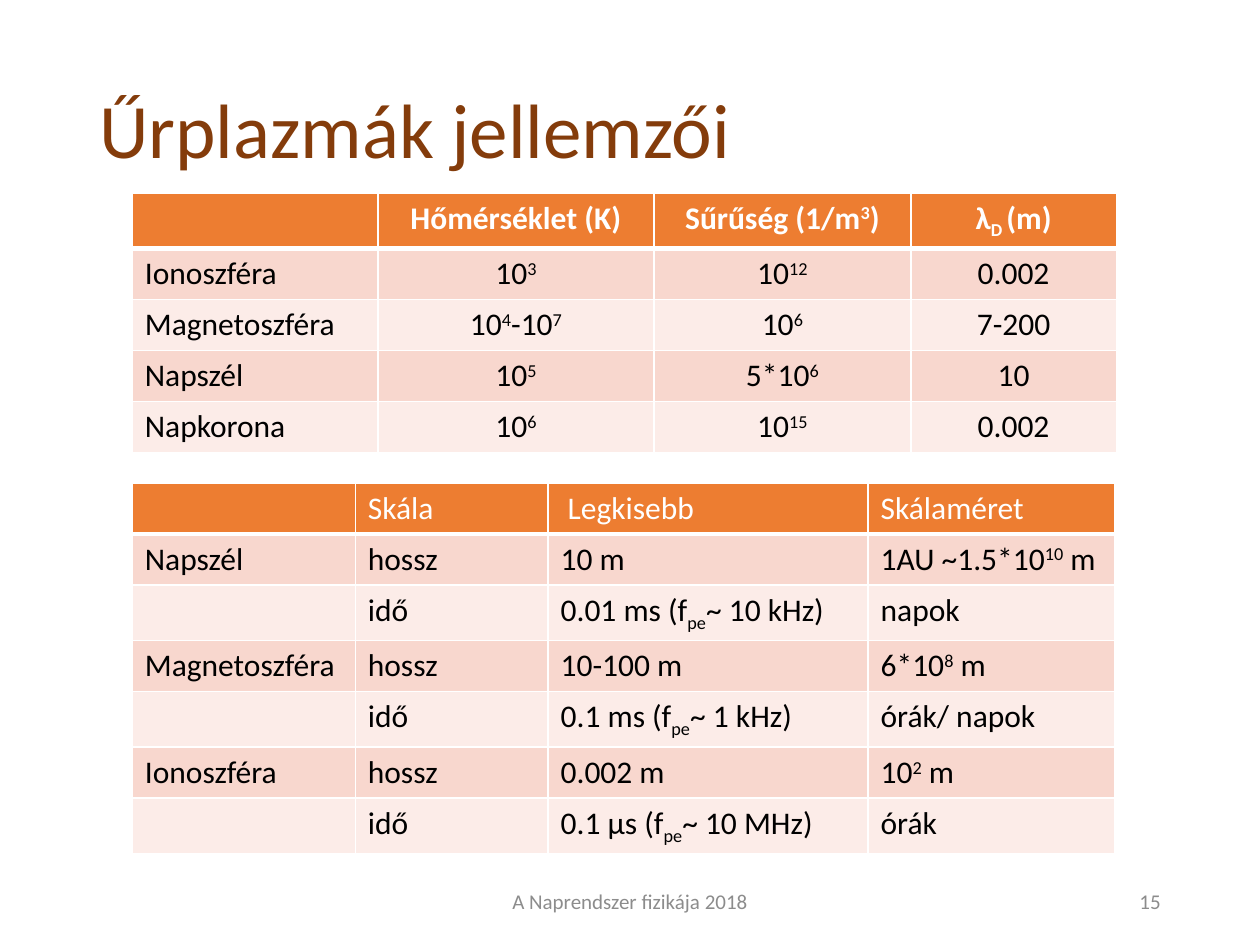
from dataclasses import dataclass

from lxml import etree
from pptx import Presentation
from pptx.dml.color import RGBColor
from pptx.enum.text import MSO_ANCHOR, PP_ALIGN
from pptx.oxml.ns import qn
from pptx.util import Inches, Pt

LEFT, MID, RIGHT = PP_ALIGN.LEFT, PP_ALIGN.CENTER, PP_ALIGN.RIGHT
TOP, CENTRE = MSO_ANCHOR.TOP, MSO_ANCHOR.MIDDLE
WIDE, HIGH = Inches(10), Inches(7.5)
FONT = "Calibri"
WHITE, BLACK, BROWN, GREY = "FFFFFF", "000000", "843C0B", "8C8C8C"
HEAD, BANDS = "ED7D31", ("F8D7CE", "FCECE8")
ROW = 5.4  # table row, percent of slide height
SHIFT = {"^": "30000", "_": "-25000"}  # raised and lowered runs


@dataclass
class Label:
    """A line of text; the box is in percent of the slide."""
    text: str
    box: tuple
    size: int
    hue: str
    align: PP_ALIGN
    anchor: MSO_ANCHOR
    space: float = 1.0


@dataclass
class Grid:
    """A banded table; places and widths are in percent of the slide."""
    left: float
    top: float
    cols: tuple
    rows: tuple
    bold: bool
    align: PP_ALIGN


def across(part: float) -> int:
    return round(WIDE * part / 100)


def down(part: float) -> int:
    return round(HIGH * part / 100)


def tint(code: str) -> RGBColor:
    return RGBColor.from_string(code)


def write(para, text: str, size: int, hue: str, bold: bool = False) -> None:
    """Add runs parted by |, where a leading ^ raises and _ lowers."""
    look = {"name": FONT, "size": Pt(size), "bold": bold}
    for piece in text.split("|"):
        shift = SHIFT.get(piece[:1])
        run = para.add_run()
        run.text = piece[1:] if shift else piece
        for key, value in look.items():
            setattr(run.font, key, value)
        run.font.color.rgb = tint(hue)
        if shift:
            run.font._element.set("baseline", shift)


def put_label(slide, label: Label) -> None:
    x, y, w, h = label.box
    frame = slide.shapes.add_textbox(
        across(x), down(y), across(w), down(h)).text_frame
    frame.word_wrap = True
    frame.vertical_anchor = label.anchor
    para = frame.paragraphs[0]
    para.alignment, para.line_spacing = label.align, label.space
    write(para, label.text, label.size, label.hue)


def edge(cell, row: int) -> None:
    """White cell borders, thick between the head and the body."""
    props = cell._tc.get_or_add_tcPr()
    wide = {"T": 3 if row == 1 else 1, "B": 3 if row == 0 else 1}
    for side in "LRTB":
        line = etree.SubElement(props, qn(f"a:ln{side}"),
                                w=str(Pt(wide.get(side, 1))))
        fill = etree.SubElement(line, qn("a:solidFill"))
        etree.SubElement(fill, qn("a:srgbClr"), val=WHITE)


def put_grid(slide, grid: Grid) -> None:
    count = len(grid.rows)
    table = slide.shapes.add_table(
        count, len(grid.cols), across(grid.left), down(grid.top),
        across(sum(grid.cols)), down(ROW * count)).table
    for col, width in zip(table.columns, grid.cols):
        col.width = across(width)
    for r, texts in enumerate(grid.rows):
        table.rows[r].height = down(ROW)
        for c, text in enumerate(texts):
            cell = table.cell(r, c)
            edge(cell, r)
            cell.fill.solid()
            cell.fill.fore_color.rgb = tint(BANDS[(r - 1) % 2] if r else HEAD)
            para = cell.text_frame.paragraphs[0]
            para.alignment = grid.align if c else LEFT
            if text:
                write(para, text, 18, BLACK if r else WHITE,
                      grid.bold and r == 0)


LABELS = (
    Label("Űrplazmák jellemzői", (6.9, 9.1, 86.2, 76.1), 44, BROWN,
          LEFT, TOP, 0.9),
    Label("A Naprendszer fizikája 2018", (33.1, 92.7, 33.8, 5.3), 12, GREY,
          MID, CENTRE),
    Label("15", (70.6, 92.7, 22.5, 5.3), 12, GREY, RIGHT, CENTRE),
)

GRIDS = (
    # Plasma properties
    Grid(10.5, 20.4, (19.5, 21.9, 20.4, 16.3), (
        ("", "Hőmérséklet (K)", "Sűrűség (1/m|^3|)", "λ|_D |(m)"),
        ("Ionoszféra", "10|^3", "10|^12", "0.002"),
        ("Magnetoszféra", "10|^4|-10|^7", "10|^6", "7-200"),
        ("Napszél", "10|^5", "5*10|^6", "10"),
        ("Napkorona", "10|^6", "10|^15", "0.002"),
    ), True, MID),
    # Length and time scales
    Grid(10.5, 51.1, (17.7, 15.3, 25.4, 19.6), (
        ("", "Skála", " Legkisebb", "Skálaméret"),
        ("Napszél", "hossz", "10 m", "1AU ~1.5*10|^10| m"),
        ("", "idő", "0.01 ms (f|_pe|~ 10 kHz)", "napok"),
        ("Magnetoszféra", "hossz", "10-100 m", "6*10|^8| m"),
        ("", "idő", "0.1 ms (f|_pe|~ 1 kHz)", "órák/ napok"),
        ("Ionoszféra", "hossz", "0.002 m", "10|^2| m"),
        ("", "idő", "0.1 μs (f|_pe|~ 10 MHz)", "órák"),
    ), False, LEFT),
)


def main() -> None:
    deck = Presentation()
    deck.slide_width, deck.slide_height = WIDE, HIGH
    slide = deck.slides.add_slide(deck.slide_layouts[6])
    for label in LABELS:
        put_label(slide, label)
    for grid in GRIDS:
        put_grid(slide, grid)
    deck.save("out.pptx")


if __name__ == "__main__":
    main()
